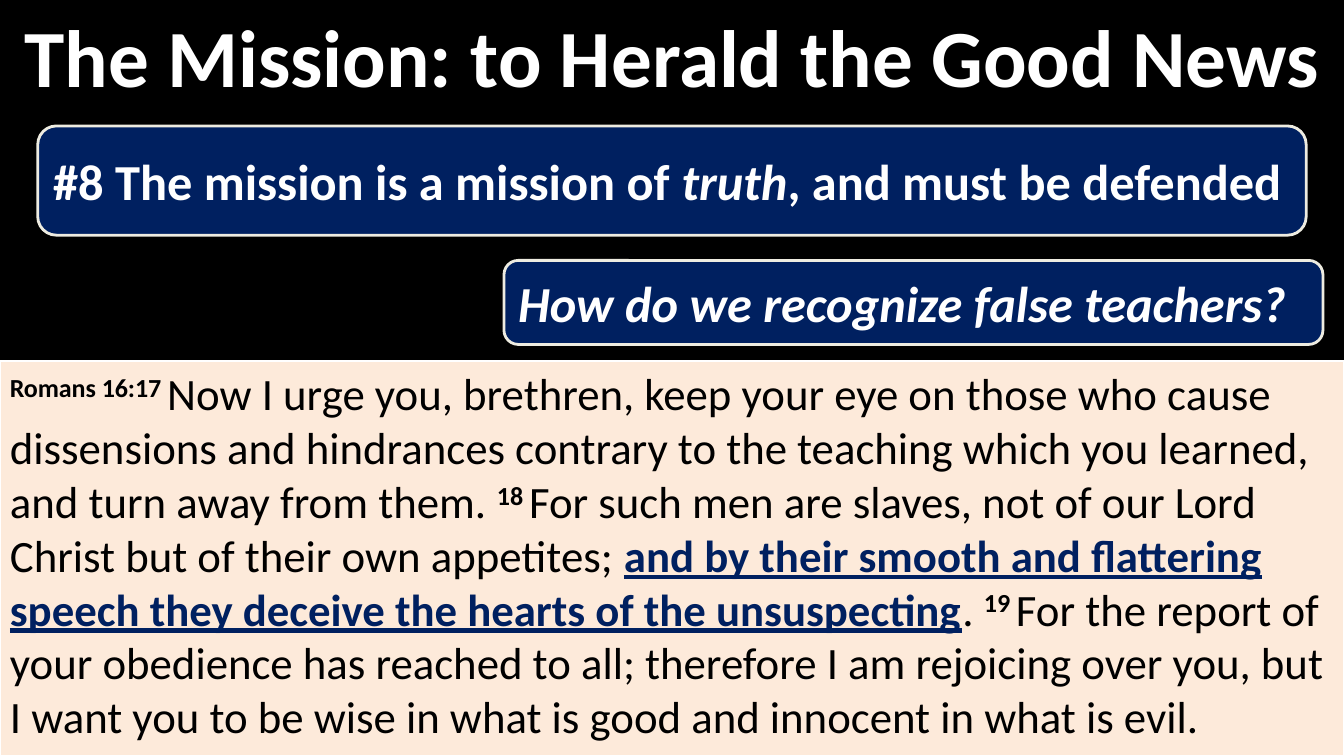
from dataclasses import dataclass

from pptx import Presentation
from pptx.dml.color import RGBColor
from pptx.enum.shapes import MSO_SHAPE
from pptx.enum.text import MSO_ANCHOR, PP_ALIGN
from pptx.util import Inches, Pt

COLUMNS, ROWS = 32, 18


@dataclass(frozen=True)
class Theme:
    font: str = "Calibri"
    background: str = "000000"
    light: str = "FFFFFF"
    dark: str = "000000"
    navy: str = "002060"
    peach: str = "FDEADA"
    cream: str = "EEECE1"
    title_size: int = 58
    callout_size: int = 36
    passage_size: int = 32
    callout_line: float = 2
    passage_line: float = 1.5


class SlideBuilder:
    def __init__(self, presentation, theme):
        self.theme = theme
        self.column = presentation.slide_width / COLUMNS
        self.row = presentation.slide_height / ROWS
        self.slide = presentation.slides.add_slide(presentation.slide_layouts[6])
        fill = self.slide.background.fill
        fill.solid()
        fill.fore_color.rgb = RGBColor.from_string(theme.background)

    def box(self, left, top, width, height):
        return (round(left * self.column), round(top * self.row),
                round(width * self.column), round(height * self.row))

    def add_text(self, shape, parts, size, color, anchor, alignment=PP_ALIGN.LEFT):
        text_frame = shape.text_frame
        text_frame.word_wrap = True
        text_frame.vertical_anchor = anchor
        paragraph = text_frame.paragraphs[0]
        paragraph.alignment = alignment
        for text, style in parts:
            run = paragraph.add_run()
            run.text = text
            run.font.name = self.theme.font
            run.font.size = Pt(size)
            run.font.bold = style.get("bold", False)
            run.font.italic = style.get("italic", False)
            run.font.underline = style.get("underline", False)
            run.font.color.rgb = RGBColor.from_string(style.get("color", color))
            if style.get("superscript"):
                run.font._element.set("baseline", "30000")

    def panel(self, kind, box, fill, line, line_width):
        shape = self.slide.shapes.add_shape(kind, *self.box(*box))
        shape.shadow.inherit = False
        shape.fill.solid()
        shape.fill.fore_color.rgb = RGBColor.from_string(fill)
        shape.line.color.rgb = RGBColor.from_string(line)
        shape.line.width = Pt(line_width)
        return shape

    def title(self, text, box):
        shape = self.slide.shapes.add_textbox(*self.box(*box))
        self.add_text(shape, [(text, {"bold": True})], self.theme.title_size,
                      self.theme.light, MSO_ANCHOR.MIDDLE, PP_ALIGN.CENTER)

    def passage(self, parts, box):
        theme = self.theme
        shape = self.panel(MSO_SHAPE.RECTANGLE, box, theme.peach, theme.light, theme.passage_line)
        self.add_text(shape, parts, theme.passage_size, theme.dark, MSO_ANCHOR.TOP)

    def callout(self, parts, box):
        theme = self.theme
        shape = self.panel(MSO_SHAPE.ROUNDED_RECTANGULAR_CALLOUT, box,
                           theme.navy, theme.cream, theme.callout_line)
        for index, value in enumerate((-0.22, 0.5, 0.17)):
            shape.adjustments[index] = value
        self.add_text(shape, parts, theme.callout_size, theme.light, MSO_ANCHOR.MIDDLE)


def main():
    presentation = Presentation()
    presentation.slide_width = Inches(13.33)
    presentation.slide_height = Inches(7.5)
    theme = Theme()
    builder = SlideBuilder(presentation, theme)

    plain = {}
    bold = {"bold": True}
    bold_italic = {"bold": True, "italic": True}
    verse = {"bold": True, "superscript": True}
    key_phrase = {"bold": True, "underline": True, "color": theme.navy}

    builder.title("The Mission: to Herald the Good News", (0, 0, COLUMNS, 2.6))
    builder.passage([
        ("Romans 16:17 ", verse),
        ("Now I urge you, brethren, keep your eye on those who cause dissensions and "
         "hindrances contrary to the teaching which you learned, and turn away from them. ", plain),
        ("18 ", verse),
        ("For such men are slaves, not of our Lord Christ but of their own appetites; ", plain),
        ("and by their smooth and flattering speech they deceive the hearts of the unsuspecting",
         key_phrase),
        (". ", plain),
        ("19 ", verse),
        ("For the report of your obedience has reached to all; therefore I am rejoicing over you, "
         "but I want you to be wise in what is good and innocent in what is evil.", plain),
    ], (0, 8.6, COLUMNS, 9.4))
    builder.callout([
        ("#8 The mission is a mission of ", bold),
        ("truth", bold_italic),
        (", and must be defended", bold),
    ], (0.9, 3, 30.2, 2.6))
    builder.callout([("How do we recognize false teachers?", bold_italic)], (12, 6.2, 19.5, 2))

    presentation.save("out.pptx")


if __name__ == "__main__":
    main()
